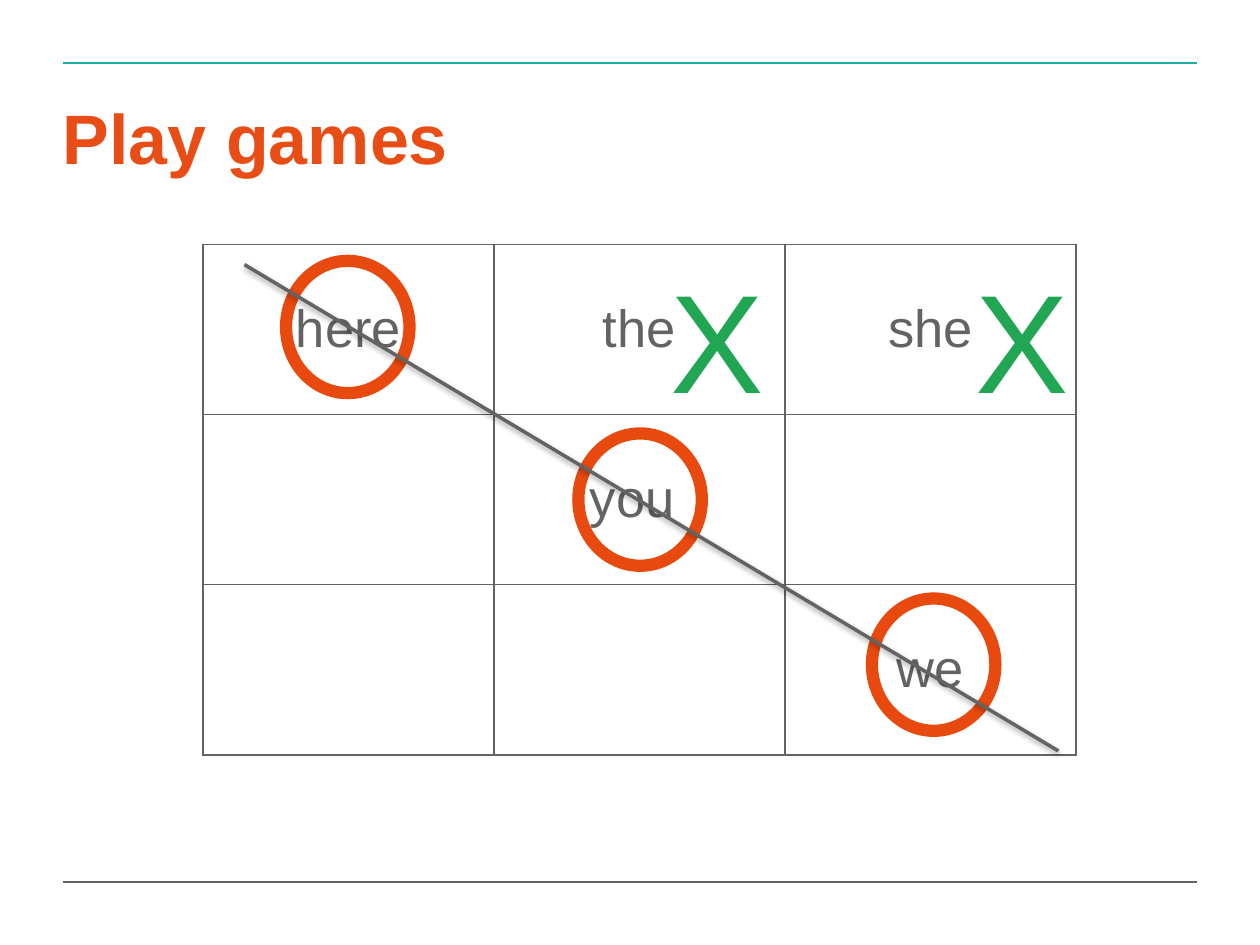
from lxml import etree
from pptx import Presentation
from pptx.dml.color import RGBColor
from pptx.enum.shapes import MSO_CONNECTOR, MSO_SHAPE
from pptx.enum.text import MSO_ANCHOR, PP_ALIGN
from pptx.oxml import parse_xml
from pptx.oxml.ns import nsdecls, qn
from pptx.util import Inches, Pt

COLORS = {
    "teal": "1DADA7",
    "gray": "646363",
    "title": "E74D15",
    "ring": "E7490F",
    "cross": "21A654",
    "shadow": "000000",
}
FONT = "Arial"
WORDS = [["here", "the", "she"], ["", "you ", ""], ["", "", "we"]]
RINGS = [(0.66, 0.13), (2.98, 1.5), (5.31, 2.81)]
CROSSES = [(6.03, 0.02), (3.61, 0.02)]


def rgb(name):
    return RGBColor.from_string(COLORS[name])


def style_text(paragraph, size, color, bold=False):
    paragraph.font.name = FONT
    paragraph.font.size = Pt(size)
    paragraph.font.bold = bold
    paragraph.font.color.rgb = rgb(color)


def add_line(slide, start, end, color, width):
    points = [Inches(value) for value in (*start, *end)]
    line = slide.shapes.add_connector(MSO_CONNECTOR.STRAIGHT, *points)
    line.line.color.rgb = rgb(color)
    line.line.width = Pt(width)
    effects = etree.SubElement(line._element.spPr, qn("a:effectLst"))
    return effects


def add_text(slide, text, left, top, width, height):
    box = slide.shapes.add_textbox(
        Inches(left), Inches(top), Inches(width), Inches(height)
    )
    frame = box.text_frame
    frame.word_wrap = True
    frame.text = text
    return frame


def add_header(slide, left, top, width, height):
    frame = add_text(slide, "Play games", left, top, width, height)
    frame.margin_left = frame.margin_right = 0
    frame.margin_top = frame.margin_bottom = 0
    style_text(frame.paragraphs[0], 40, "title", bold=True)


def style_cell(cell, word):
    properties = cell._tc.get_or_add_tcPr()
    for side in ("lnL", "lnR", "lnT", "lnB"):
        properties.append(parse_xml(
            f'<a:{side} {nsdecls("a")} w="{Pt(1)}"><a:solidFill>'
            f'<a:srgbClr val="{COLORS["gray"]}"/></a:solidFill></a:{side}>'
        ))
    cell.fill.background()
    cell.vertical_anchor = MSO_ANCHOR.MIDDLE
    cell.text = word
    paragraph = cell.text_frame.paragraphs[0]
    paragraph.alignment = PP_ALIGN.CENTER
    style_text(paragraph, 30, "gray")


def add_word_grid(slide, left, top, width, height):
    grid = slide.shapes.add_table(
        len(WORDS), len(WORDS[0]),
        Inches(left), Inches(top), Inches(width), Inches(height),
    ).table
    grid.first_row = grid.horz_banding = False
    for row, words in enumerate(WORDS):
        for column, word in enumerate(words):
            style_cell(grid.cell(row, column), word)


def add_ring(slide, left, top):
    ring = slide.shapes.add_shape(
        MSO_SHAPE.OVAL, Inches(left), Inches(top), Inches(0.98), Inches(1.05)
    )
    ring.shadow.inherit = False
    ring.fill.background()
    ring.line.color.rgb = rgb("ring")
    ring.line.width = Pt(7)


def add_winning_line(slide, start, end):
    effects = add_line(slide, start, end, "gray", 2)
    effects.append(parse_xml(
        f'<a:outerShdw {nsdecls("a")} blurRad="{Pt(3.1)}" dist="{Pt(1.6)}" '
        f'dir="5400000" rotWithShape="0"><a:srgbClr val="{COLORS["shadow"]}">'
        '<a:alpha val="38000"/></a:srgbClr></a:outerShdw>'
    ))


def add_game(slide, left, top, width, height):
    add_word_grid(slide, left, top, width, height)
    for x, y in RINGS:
        add_ring(slide, left + x, top + y)
    for x, y in CROSSES:
        cross = add_text(slide, "X", left + x, top + y, 1.5, 1.45)
        style_text(cross.paragraphs[0], 80, "cross")
    add_winning_line(
        slide,
        (left + 0.33, top + 0.16),
        (left + width - 0.14, top + height - 0.03),
    )


def main():
    deck = Presentation()
    deck.slide_width = Inches(10)
    deck.slide_height = Inches(7.5)
    slide = deck.slides.add_slide(deck.slide_layouts[6])
    for y, color in ((0.5, "teal"), (7, "gray")):
        add_line(slide, (0.5, y), (9.5, y), color, 1)
    add_header(slide, 0.5, 0.75, 9, 0.67)
    add_game(slide, 1.61, 1.94, 6.93, 4.05)
    deck.save("out.pptx")


if __name__ == "__main__":
    main()
